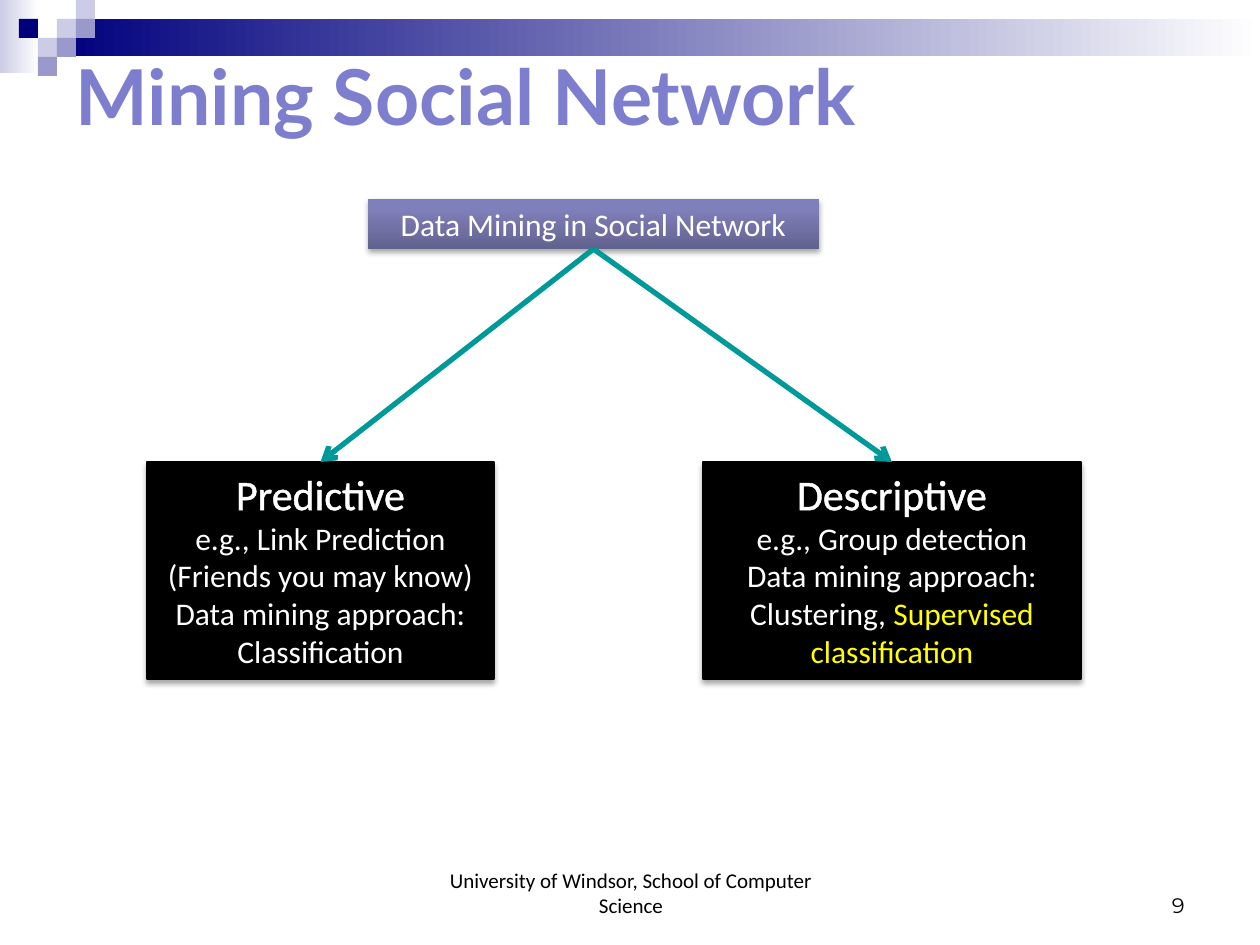
from lxml.etree import SubElement
from pptx import Presentation
from pptx.dml.color import RGBColor
from pptx.enum.shapes import MSO_CONNECTOR as CONNECTOR, MSO_SHAPE as SHAPE
from pptx.enum.text import MSO_ANCHOR as ANCHOR, MSO_AUTO_SIZE as AUTO_SIZE, PP_ALIGN as ALIGN
from pptx.oxml import parse_xml
from pptx.oxml.ns import nsdecls, qn
from pptx.util import Emu, Pt

EMU_PER_PX = 914400 / 126
COLORS = {
    "navy": "00007D", "lilac": "9999CC", "pale": "CCCCE6", "white": "FFFFFF",
    "black": "000000", "title": "7E7ECE", "root_low": "62628F",
    "root_high": "7F7FBA", "teal": "009999", "yellow": "FFFF00",
}


def px(length):
    return Emu(round(length * EMU_PER_PX))


def color(name):
    return RGBColor.from_string(COLORS[name])


def add_rect(page, box, fill):
    """Add a borderless rectangle; box is left, top, width, height."""
    rect = page.shapes.add_shape(SHAPE.RECTANGLE, *map(px, box))
    rect.shadow.inherit = False
    rect.line.fill.background()
    if fill:
        rect.fill.solid()
        rect.fill.fore_color.rgb = color(fill)
    return rect


def set_gradient(shape, stops, angle=0):
    shape.fill.gradient()
    shape.fill.gradient_angle = angle
    for stop, (position, name) in zip(shape.fill.gradient_stops, stops):
        stop.position = position
        stop.color.rgb = color(name)


def add_soft_shadow(shape):
    effects = shape._element.spPr.find(qn("a:effectLst"))
    effects.append(parse_xml(
        f'<a:outerShdw {nsdecls("a")} blurRad="{Pt(3.1)}" dist="{Pt(1.8)}" '
        'dir="5400000" rotWithShape="0"><a:srgbClr val="000000">'
        '<a:alpha val="35000"/></a:srgbClr></a:outerShdw>'))


def add_outline(span):
    span._r.get_or_add_rPr().insert(0, parse_xml(
        f'<a:ln {nsdecls("a")} w="{Pt(1.45)}"><a:solidFill>'
        f'<a:srgbClr val="{COLORS["white"]}"/></a:solidFill></a:ln>'))


def style(span, size, name, font="Calibri", bold=False):
    span.font.size = Pt(size)
    span.font.name = font
    span.font.bold = bold
    span.font.color.rgb = color(name)


def add_header(page, left, top, width):
    """Fading band with a mosaic of small squares."""
    cell = 19
    fade = add_rect(page, (left, top, 39, 73), None)
    set_gradient(fade, [(0, "pale"), (1, "white")])
    band = add_rect(page, (left + 3 * cell, top + cell, width - 3 * cell, 2 * cell - 1), None)
    set_gradient(band, [(0, "navy"), (1, "white")])
    mosaic = [(3, 1, "pale"), (4, 0, "pale"), (4, 1, "lilac"), (2, 2, "pale"),
              (1, 1, "navy"), (3, 2, "lilac"), (2, 3, "lilac")]
    for column, row, fill in mosaic:
        add_rect(page, (left + column * cell, top + row * cell, cell, cell), fill)


def add_label(page, box, text, anchor, align, **look):
    label = page.shapes.add_textbox(*map(px, box))
    frame = label.text_frame
    frame.word_wrap = True
    frame.vertical_anchor = anchor
    frame.text = text
    para = frame.paragraphs[0]
    para.alignment = align
    style(para.runs[0], **look)


def add_footer(page, left, top, height):
    add_label(page, (left, top, 400, height), "University of Windsor, School of Computer Science",
              ANCHOR.BOTTOM, ALIGN.CENTER, size=12, name="black")
    add_label(page, (left + 472, top, 294, height), "9",
              ANCHOR.BOTTOM, ALIGN.RIGHT, size=12, name="black", font="Montserrat")


def add_node(page, box, lines, fill=None):
    """Add a shadowed node; each line is a list of (text, size, colour)."""
    node = add_rect(page, box, fill)
    add_soft_shadow(node)
    frame = node.text_frame
    frame.word_wrap = True
    frame.auto_size = AUTO_SIZE.SHAPE_TO_FIT_TEXT
    frame.vertical_anchor = ANCHOR.TOP
    for index, line in enumerate(lines):
        para = frame.add_paragraph() if index else frame.paragraphs[0]
        para.alignment = ALIGN.CENTER
        for text, size, name in line:
            span = para.add_run()
            span.text = text
            style(span, size, name)
            if size == 24:
                add_outline(span)
    return node


def add_arrow(page, parent, child):
    arrow = page.shapes.add_connector(CONNECTOR.STRAIGHT, 0, 0, 0, 0)
    arrow.begin_connect(parent, 2)
    arrow.end_connect(child, 0)
    arrow.line.color.rgb = color("teal")
    arrow.line.width = Pt(3)
    SubElement(arrow.line._get_or_add_ln(), qn("a:tailEnd"), type="arrow")
    SubElement(arrow._element.spPr, qn("a:effectLst"))


def add_tree(page, left, top):
    root = add_node(page, (left + 221, top, 451, 50),
                    [[("Data Mining in Social Network", 18, "white")]])
    set_gradient(root, [(0, "root_low"), (0.8, "root_high")], angle=90)

    branches = [
        (0, 347, [
            [("Predictive", 24, "white")],
            [("e.g., Link Prediction (Friends you may know)", 18, "white")],
            [("Data mining approach: Classification", 18, "white")]]),
        (556, 378, [
            [("Descriptive", 24, "white")],
            [("e.g., Group detection", 18, "white")],
            [("Data mining approach: Clustering, ", 18, "white"),
             ("Supervised classification", 18, "yellow")]]),
    ]
    nodes = []
    for offset, width, lines in branches:
        node = add_node(page, (left + offset, top + 263, width, 217), lines, "black")
        node.line.color.rgb = color("black")
        node.line.width = Pt(0.75)
        nodes.append(node)
    for node in nodes:
        add_arrow(page, root, node)


def main():
    deck = Presentation()
    deck.slide_width, deck.slide_height = px(1260), px(945)
    page = deck.slides.add_slide(deck.slide_layouts[6])
    add_header(page, 0, 0, 1260)
    add_label(page, (63, 0, 1134, 189), "Mining Social Network",
              ANCHOR.MIDDLE, ALIGN.LEFT, size=44, name="title", font="Lato", bold=True)
    add_footer(page, 431, 861, 63)
    add_tree(page, 147, 199)
    deck.save("out.pptx")


if __name__ == "__main__":
    main()
